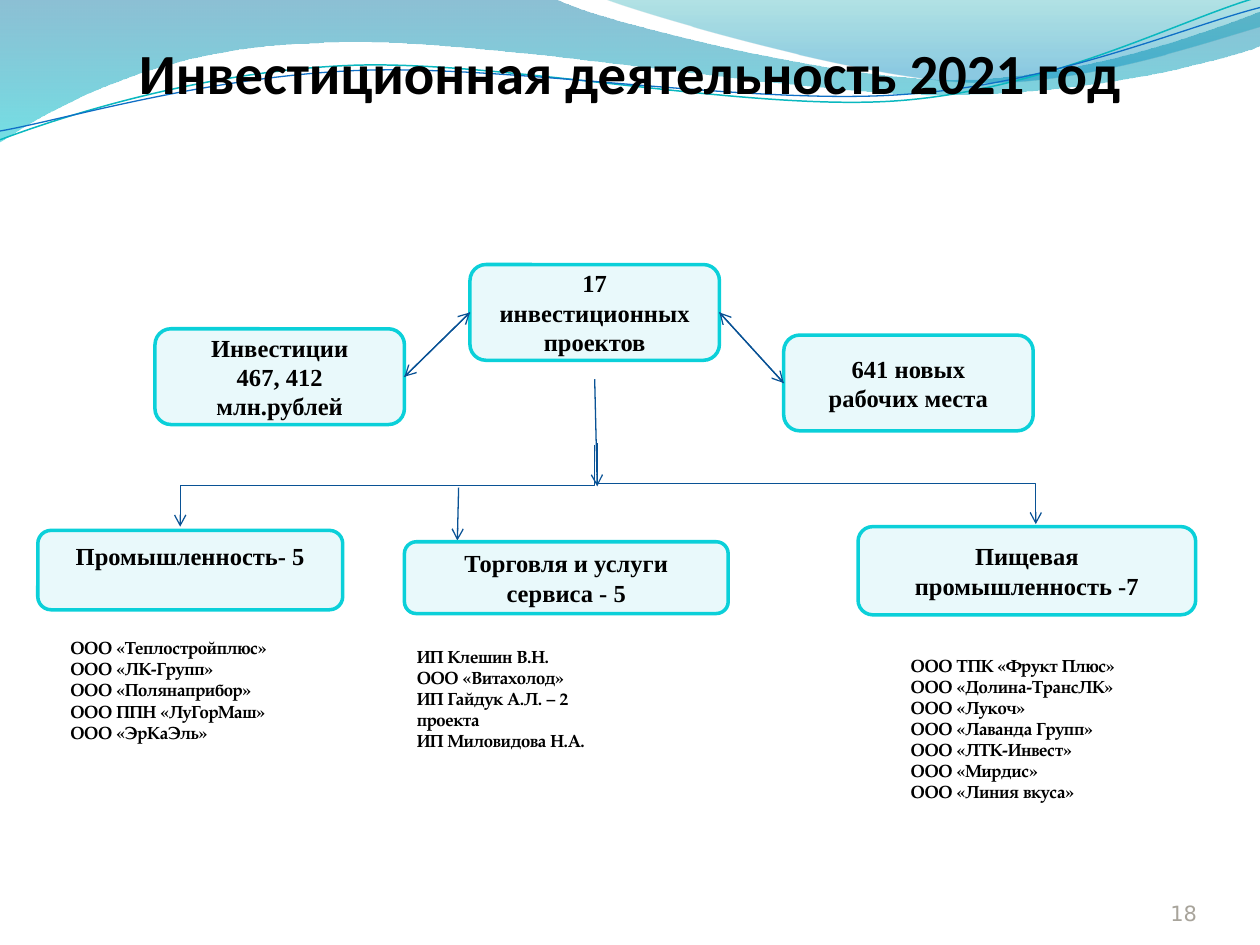
from lxml import etree
from pptx import Presentation
from pptx.dml.color import RGBColor
from pptx.enum.shapes import MSO_CONNECTOR, MSO_SHAPE
from pptx.enum.text import MSO_ANCHOR, PP_ALIGN
from pptx.oxml.ns import qn
from pptx.util import Inches, Pt

ROUND = MSO_SHAPE.ROUNDED_RECTANGLE
STRAIGHT, ELBOW = MSO_CONNECTOR.STRAIGHT, MSO_CONNECTOR.ELBOW
LEFT, CENTER, RIGHT = PP_ALIGN.LEFT, PP_ALIGN.CENTER, PP_ALIGN.RIGHT
TOP, MIDDLE, BOTTOM = MSO_ANCHOR.TOP, MSO_ANCHOR.MIDDLE, MSO_ANCHOR.BOTTOM

BLACK = RGBColor(0x00, 0x00, 0x00)
GRAY = RGBColor(0xA8, 0xA4, 0x9B)
PALE = RGBColor(0xE9, 0xF9, 0xFB)
CYAN = RGBColor(0x0B, 0xD0, 0xD9)
NAVY = RGBColor(0x09, 0x52, 0x95)
TEAL = RGBColor(0x0A, 0xB8, 0xBF)
BLUE = RGBColor(0x0F, 0x6F, 0xC6)
DEEP = RGBColor(0x00, 0x74, 0xA1)
AQUA = RGBColor(0x00, 0xC6, 0xCF)
SEA = RGBColor(0x00, 0xA1, 0xA9)
SKY = RGBColor(0x00, 0x8B, 0xBF)

WIDTH, HEIGHT = Inches(10), Inches(7.5)
CELL = WIDTH / 100

BANDS = [
    ([(0, 0), (44, -0.1), (47.6, 1.7, 66.4, 6.3, 75.8, 6.3),
      (85.3, 6.3, 95.8, 2.6, 100, 0.9), (100.1, 3.6),
      (98.3, 4.4, 87, 7.6, 74.6, 7.5), (62.2, 7.5, 38.2, 2.8, 25.7, 3.4),
      (12.9, 3.6, 4.6, 8.3, -0.1, 11.3)],
     [(0, DEEP, 45), (1, AQUA, 55)]),
    ([(47.9, -0.1), (50.9, 1.1, 68.2, 6.2, 76.9, 6.5),
      (85.6, 6.9, 96.1, 3.2, 100, 2.1), (100, 0)],
     [(0, SEA, 30), (0.8, SKY, 45)]),
]
CURVES = [
    ([(0, 11.1), (4.8, 9.3, 15.8, 5.7, 27.7, 5.2),
      (39.5, 4.7, 59.3, 8.9, 71.3, 8), (83.3, 7.1, 93.8, 1.5, 99.8, -0.2)],
     TEAL, 0.85),
    ([(0, 10.4), (4.7, 9.6, 16.4, 6.1, 28.3, 5.6),
      (40.3, 5.1, 59.7, 8.4, 71.7, 7.5), (83.6, 6.7, 94.1, 2.1, 100, 0.6)],
     BLUE, 0.75),
]
GROUPS = [
    ((3, 42.1, 24.2, 6.3), "Промышленность- 5", 2.8,
     (4.6, 50.1, 23.1, 9.4),
     ["ООО «Теплостройплюс»", "ООО «ЛК-Групп»", "ООО «Полянаприбор»",
      "ООО ППН «ЛуГорМаш»", "ООО «ЭрКаЭль»"]),
    ((32.1, 43, 25.7, 5.7), "Торговля и услуги сервиса - 5", 0.5,
     (32.1, 50.8, 18.7, 9.4),
     ["ИП Клешин В.Н.", "ООО «Витахолод»", "ИП Гайдук А.Л. – 2 проекта",
      "ИП Миловидова Н.А."]),
    ((68.1, 41.8, 26.8, 7), "Пищевая промышленность -7", 0.5,
     (71.3, 51.5, 22, 12.8),
     ["ООО ТПК «Фрукт Плюс»", "ООО «Долина-ТрансЛК»", "ООО «Лукоч»",
      "ООО «Лаванда Групп»", "ООО «ЛТК-Инвест»", "ООО «Мирдис»",
      "ООО «Линия вкуса»"]),
]


def grid(*cells):
    return [round(cell * CELL) for cell in cells]


def write(shape, lines, font, size, color, bold, align, anchor):
    frame = shape.text_frame
    frame.word_wrap = True
    frame.vertical_anchor = anchor
    frame.text = "\n".join(lines)
    for para in frame.paragraphs:
        para.alignment = align
        para.font.name = font
        para.font.size = Pt(size)
        para.font.bold = bold
        para.font.color.rgb = color
    return frame


def outline(slide, path, close):
    points = [tuple(grid(*part[i:i + 2]))
              for part in path for i in range(0, len(part), 2)]
    pen = slide.shapes.build_freeform(*points[0], scale=1.0)
    pen.add_line_segments(points[1:], close=close)
    shape = pen.convert_to_shape()
    shape.shadow.inherit = False
    lines = iter(list(shape._element.spPr.iter(qn("a:lnTo"))))
    for part in path[1:]:
        legs = [next(lines) for _ in range(len(part) // 2)]
        if len(legs) == 3:
            curve = etree.Element(qn("a:cubicBezTo"))
            legs[0].addprevious(curve)
            for leg in legs:
                curve.append(leg[0])
                leg.getparent().remove(leg)
    return shape


def waves(slide):
    for path, stops in BANDS:
        band = outline(slide, path, True)
        band.line.fill.background()
        band.fill.gradient()
        band.fill.gradient_angle = 270
        for stop, (place, color, _) in zip(band.fill.gradient_stops, stops):
            stop.position = place
            stop.color.rgb = color
        tones = band._element.spPr.iter(qn("a:srgbClr"))
        for tone, (_, _, alpha) in zip(tones, stops):
            etree.SubElement(tone, qn("a:alpha"), val=str(alpha * 1000))
    for path, color, width in CURVES:
        curve = outline(slide, path, False)
        curve.fill.background()
        curve.line.color.rgb = color
        curve.line.width = Pt(width)


def heading(slide, box, text):
    title = slide.shapes.title
    title.left, title.top, title.width, title.height = grid(*box)
    frame = write(title, [text], "Calibri", 32.4, BLACK, True, CENTER, BOTTOM)
    frame.margin_left = frame.margin_right = frame.margin_bottom = 0
    slide.shapes._spTree.append(title._element)


def number(slide, box, text):
    note = slide.shapes.add_textbox(*grid(*box))
    frame = write(note, [text], "DejaVu Sans", 12, GRAY, False, RIGHT, BOTTOM)
    frame.margin_left = frame.margin_right = 0
    frame.margin_top = frame.margin_bottom = 0


def card(slide, box, lines, base=0.5, side=1):
    shape = slide.shapes.add_shape(ROUND, *grid(*box))
    shape.shadow.inherit = False
    shape.fill.solid()
    shape.fill.fore_color.rgb = PALE
    shape.line.color.rgb = CYAN
    shape.line.width = Pt(2)
    frame = write(shape, lines, "Times New Roman", 14, BLACK, True, CENTER, MIDDLE)
    frame.margin_bottom = grid(base)[0]
    frame.margin_left = frame.margin_right = grid(side)[0]
    return shape


def arrow(slide, kind, ends):
    link = slide.shapes.add_connector(kind, *grid(*ends))
    link.line.color.rgb = NAVY
    link.line.width = Pt(0.75)
    props = link._element.spPr
    etree.SubElement(props.find(qn("a:ln")), qn("a:tailEnd"), type="arrow")
    etree.SubElement(props, qn("a:effectLst"))
    return link


def join(slide, first, side, last, other):
    link = arrow(slide, STRAIGHT, (0, 0, 1, 1))
    link.begin_connect(first, side)
    link.end_connect(last, other)


def bend(slide, left, top, right, bottom):
    mid, row = (left + right) / 2, (top + bottom) / 2
    tall, wide = (bottom - top) / 2, abs(right - left) / 2
    turn, sign = (270, -1) if right > left else (90, 1)
    ends = (mid - sign * tall, row - wide, mid + sign * tall, row + wide)
    link = arrow(slide, ELBOW, ends)
    link._element.spPr.find(qn("a:xfrm")).set("rot", str(turn * 60000))


def summary(slide, left, top):
    size = (19.8, 7.6)
    hub = card(slide, (left + 25, top, *size), ["17 инвестиционных проектов"])
    funds = card(slide, (left, top + 5.1, *size),
                 ["Инвестиции", "467, 412 млн.рублей"])
    jobs = card(slide, (left + 49.9, top + 5.6, *size),
                ["641 новых рабочих места"], side=1.6)
    for pair in ((hub, 3, jobs, 1), (hub, 1, funds, 3)):
        join(slide, *pair)
        join(slide, *pair[2:], *pair[:2])


def branches(slide):
    arrow(slide, STRAIGHT, (47.2, 30.1, 47.4, 38.6))
    bend(slide, 47.2, 35.3, 14.3, 41.8)
    bend(slide, 47.4, 35.2, 82.2, 41.6)
    arrow(slide, STRAIGHT, (36.4, 38.7, 36.3, 42.9))


def group(slide, box, label, base, area, names):
    card(slide, box, [label], base)
    note = slide.shapes.add_textbox(*grid(*area))
    write(note, names, "TeX Gyre Pagella", 10, BLACK, True, LEFT, TOP)


def main():
    deck = Presentation()
    deck.slide_width, deck.slide_height = WIDTH, HEIGHT
    slide = deck.slides.add_slide(deck.slide_layouts[5])
    waves(slide)
    heading(slide, (5, 3, 90, 5.4), "Инвестиционная деятельность 2021 год")
    number(slide, (86.7, 69.5, 8.3, 4), "18")
    summary(slide, 12.3, 21)
    branches(slide)
    for part in GROUPS:
        group(slide, *part)
    deck.save("out.pptx")


if __name__ == "__main__":
    main()
